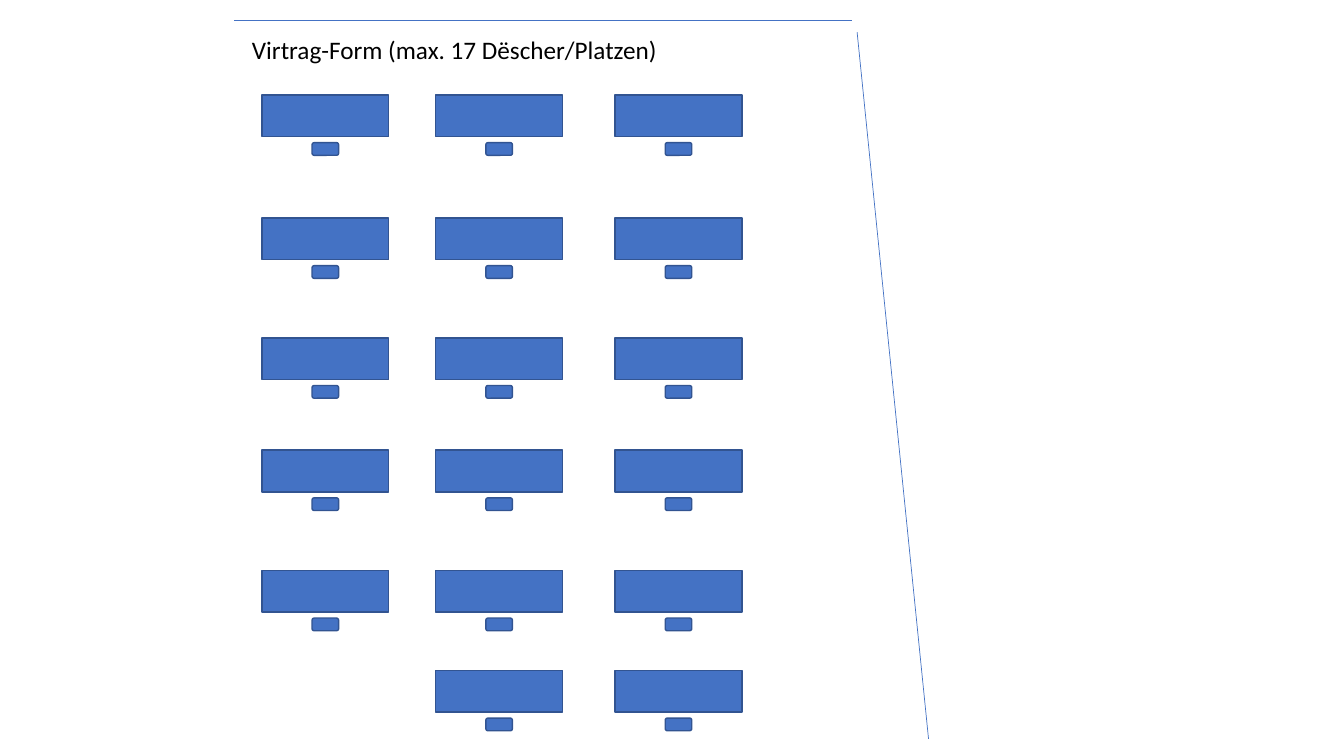
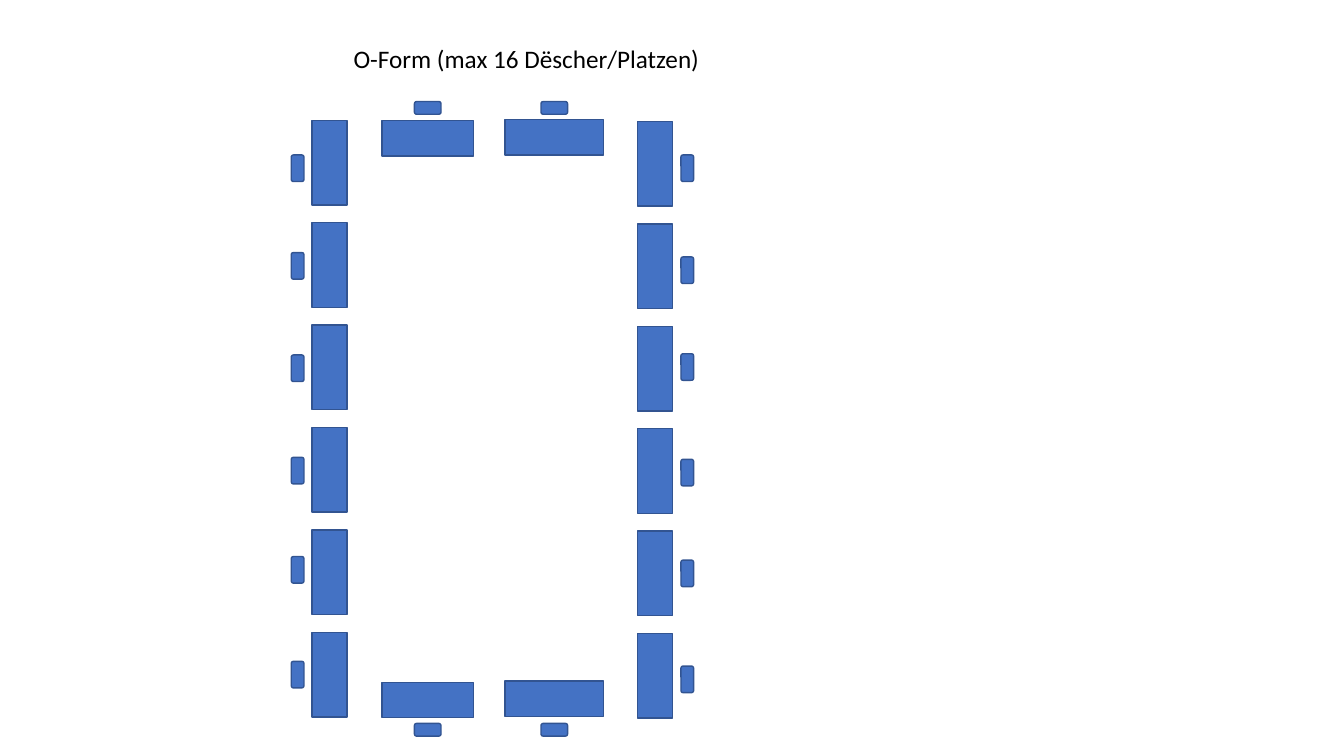
from lxml.etree import SubElement
from pptx import Presentation
from pptx.dml.color import RGBColor
from pptx.enum.shapes import MSO_CONNECTOR, MSO_SHAPE
from pptx.enum.text import MSO_AUTO_SIZE
from pptx.oxml.ns import qn
from pptx.util import Cm, Pt

COLOURS = {"furniture": "4472C4", "outline": "325491", "text": "000000"}
FONT = "Calibri"
CHAIR_WIDTH, CHAIR_HEIGHT = 0.67, 0.32


class SeatingPlan:
    """Holds the style and the slide being drawn; all lengths are centimetres."""

    def __init__(self, presentation):
        self.presentation = presentation
        self.slide = None

    def new_slide(self):
        blank_layout = self.presentation.slide_layouts[6]
        self.slide = self.presentation.slides.add_slide(blank_layout)

    def title(self, text, left, top, width):
        box = self.slide.shapes.add_textbox(Cm(left), Cm(top), Cm(width), Cm(1.02))
        frame = box.text_frame
        frame.word_wrap = True
        frame.auto_size = MSO_AUTO_SIZE.SHAPE_TO_FIT_TEXT
        run = frame.paragraphs[0].add_run()
        run.text = text
        run.font.name = FONT
        run.font.size = Pt(18)
        run.font.color.rgb = RGBColor.from_string(COLOURS["text"])

    def furniture(self, preset, centre_x, centre_y, width, height, rotation):
        """Draw one piece around its centre, so that turning keeps its place."""
        shape = self.slide.shapes.add_shape(
            preset, Cm(centre_x - width / 2), Cm(centre_y - height / 2),
            Cm(width), Cm(height))
        shape.rotation = rotation
        shape.shadow.inherit = False
        shape.fill.solid()
        shape.fill.fore_color.rgb = RGBColor.from_string(COLOURS["furniture"])
        shape.line.color.rgb = RGBColor.from_string(COLOURS["outline"])
        shape.line.width = Pt(1)

    def desk(self, centre_x, centre_y, width, height, rotation=0):
        self.furniture(MSO_SHAPE.RECTANGLE, centre_x, centre_y, width, height, rotation)

    def chair(self, centre_x, centre_y, rotation=0):
        self.furniture(MSO_SHAPE.ROUNDED_RECTANGLE, centre_x, centre_y,
                       CHAIR_WIDTH, CHAIR_HEIGHT, rotation)

    def wall(self, start_x, start_y, end_x, end_y):
        line = self.slide.shapes.add_connector(
            MSO_CONNECTOR.STRAIGHT, Cm(start_x), Cm(start_y), Cm(end_x), Cm(end_y))
        line.line.color.rgb = RGBColor.from_string(COLOURS["furniture"])
        line.line.width = Pt(0.5)
        SubElement(line._element.spPr, qn("a:effectLst"))


def draw_lecture_layout(plan):
    plan.new_slide()
    plan.title("Virtrag-Form (max. 17 Dëscher/Platzen)", 6.1, 0.74, 13.74)
    plan.wall(5.9, 0.51, 21.46, 0.51)
    plan.wall(21.6, 0.81, 23.4, 18.62)

    desk_width, desk_height, chair_gap = 3.2, 1.05, 0.15
    columns = [8.2, 12.58, 17.1]
    rows = [2.92, 6.02, 9.04, 11.87, 14.9, 17.42]
    chair_offset = desk_height / 2 + chair_gap + CHAIR_HEIGHT / 2
    for row in rows:
        # The last row leaves the left column free
        for column in columns[1:] if row == rows[-1] else columns:
            plan.desk(column, row, desk_width, desk_height)
            plan.chair(column, row + chair_offset)


def draw_o_layout(plan):
    plan.new_slide()
    plan.title("O-Form (max 16 Dëscher/Platzen)", 8.66, 0.97, 12.17)

    # Long sides: desk x, first desk y, chair x, chair y positions
    sides = [
        (8.3, 4.1, 7.5, [4.24, 6.7, 9.28, 11.86, 14.36, 17]),
        (16.51, 4.13, 17.32, [4.24, 6.81, 9.25, 11.91, 14.45, 17.12]),
    ]
    desk_step = 2.58
    for desk_x, first_y, chair_x, chair_positions in sides:
        for index, chair_y in enumerate(chair_positions):
            plan.desk(desk_x, first_y + index * desk_step, 2.13, 0.88, rotation=90)
            plan.chair(chair_x, chair_y, rotation=90)

    # Short sides: desk y, chair y
    for desk_y, chair_y in [(3.49, 2.72), (17.64, 18.39)]:
        for centre_x, width, lift in [(10.78, 2.3, 0), (13.97, 2.48, 0.03)]:
            plan.desk(centre_x, desk_y - lift, width, 0.89)
            plan.chair(centre_x, chair_y)


def main():
    presentation = Presentation()
    presentation.slide_width = Cm(33.87)
    presentation.slide_height = Cm(19.05)
    plan = SeatingPlan(presentation)
    draw_lecture_layout(plan)
    draw_o_layout(plan)
    presentation.save("out.pptx")


if __name__ == "__main__":
    main()
